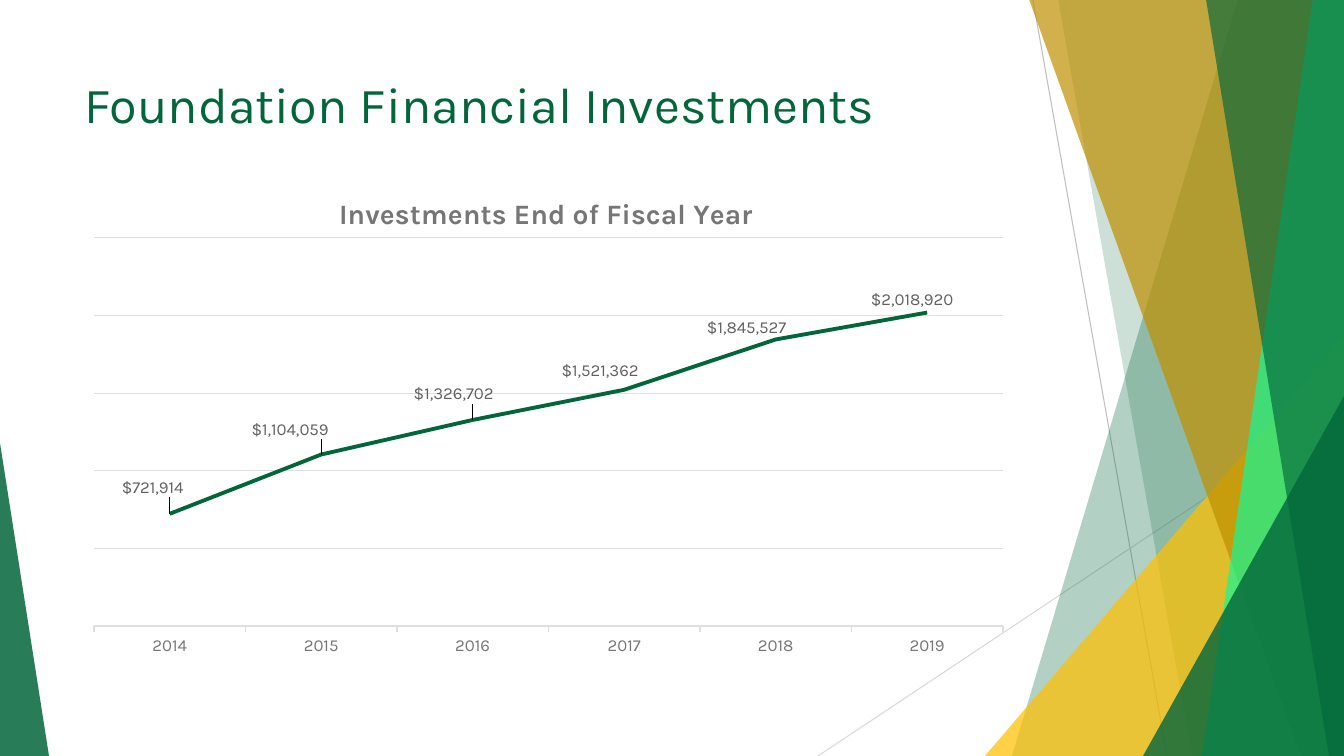
from lxml.etree import SubElement
from pptx import Presentation
from pptx.chart.data import CategoryChartData
from pptx.dml.color import RGBColor
from pptx.enum.chart import XL_CHART_TYPE, XL_LABEL_POSITION as LABEL_AT, XL_TICK_LABEL_POSITION as TICK_AT
from pptx.enum.chart import XL_TICK_MARK as TICK
from pptx.enum.shapes import MSO_CONNECTOR, MSO_SHAPE
from pptx.oxml import parse_xml
from pptx.oxml.ns import nsdecls, qn
from pptx.util import Pt

PX = 914400 / 100.8
WIDTH, HEIGHT = 1344, 756
FONT = "Karla"
DOLLARS = '"$"#,##0'
COLORS = {
    "green": "03663B", "mint": "13F895", "yellow": "FFC000", "gold": "BF9000",
    "line_dark": "BFBFBF", "line_light": "D9D9D9", "grid": "DFDFDF",
    "axis_text": "767676", "label_text": "616161", "chart_text": "2C2C2C",
}


def style_font(font, size, color, bold=False):
    font.name = FONT
    font.size = Pt(size)
    font.bold = bold
    font.color.rgb = RGBColor.from_string(COLORS[color])


def write_text(frame, text, **font_format):
    run = frame.paragraphs[0].add_run()
    run.text = text
    style_font(run.font, **font_format)


prs = Presentation()
prs.slide_width, prs.slide_height = round(WIDTH * PX), round(HEIGHT * PX)
slide = prs.slides.add_slide(prs.slide_layouts[6])
shapes = slide.shapes

# Thin crossing lines
for start, end, color in [
    ((1033, 0), (1167, HEIGHT), "line_dark"),
    ((WIDTH, 406), (818, HEIGHT), "line_light"),
]:
    ray = shapes.add_connector(
        MSO_CONNECTOR.STRAIGHT, *(round(v * PX) for v in start + end))
    ray.line.width = Pt(0.75)
    ray.line.color.rgb = RGBColor.from_string(COLORS[color])
    SubElement(ray._element.spPr, qn("a:effectLst"))

# Overlapping facets, back to front: full-height bands are given by the x of
# their left edge at top and bottom, triangles by their box and apex position
facets = [
    ("band", (1238, 1012), "green", 30),
    ("band", (1058, 1192), "green", 20),
    ("triangle", (985, 336, 359, 420, 1), "yellow", 72),
    ("band", (1029, 1301), "gold", 70),
    ("band", (1313, 1202), "mint", 70),
    ("band", (1206, 1329), "green", 65),
    ("triangle", (1143, 396, 201, 360, 1), "green", 80),
    ("triangle", (0, 443, 49, 313, 0), "green", 85),
]
for kind, geometry, color, opacity in facets:
    if kind == "band":
        top_x, bottom_x = geometry
        outline = shapes.build_freeform(top_x, -1, scale=PX)
        outline.add_line_segments([(WIDTH, -1), (WIDTH, HEIGHT), (bottom_x, HEIGHT)])
        facet = outline.convert_to_shape()
    else:
        *box, apex = geometry
        facet = shapes.add_shape(
            MSO_SHAPE.ISOSCELES_TRIANGLE, *(round(v * PX) for v in box))
        facet.adjustments[0] = apex
    facet.shadow.inherit = False
    facet.line.fill.background()
    facet.fill.solid()
    facet.fill.fore_color.rgb = RGBColor.from_string(COLORS[color])
    fill_color = facet._element.spPr.find(qn("a:solidFill"))[0]
    SubElement(fill_color, qn("a:alpha"), val=str(opacity * 1000))

# Heading
heading = shapes.add_textbox(*(round(v * PX) for v in (75, 68, 948, 145))).text_frame
heading.word_wrap = True
write_text(heading, "Foundation Financial Investments", size=36, color="green")

# Investments by year, with the label's shift from its point in px
investments = [
    ("2014", 721914, (-17, -26)),
    ("2015", 1104059, (-31, -25)),
    ("2016", 1326702, (-19, -26)),
    ("2017", 1521362, (-24, -19)),
    ("2018", 1845527, (-29, -12)),
    ("2019", 2018920, (-15, -13)),
]
chart_left, chart_top, chart_width, chart_height = chart_box = (75, 168, 948, 497)
data = CategoryChartData(number_format=DOLLARS)
data.categories = [year for year, _, _ in investments]
data.add_series("Series 1", [amount for _, amount, _ in investments])
chart = shapes.add_chart(
    XL_CHART_TYPE.LINE, *(round(v * PX) for v in chart_box), data).chart
style_font(chart.font, 10, "chart_text")
chart.has_legend = False
chart.has_title = True
write_text(chart.chart_title.text_frame, "Investments End of Fiscal Year",
           size=20, color="axis_text", bold=True)
chart.chart_title.include_in_layout = False

years = chart.category_axis
years.major_tick_mark = TICK.OUTSIDE
years.tick_label_position = TICK_AT.LOW
years.format.line.width = Pt(1)
years.format.line.color.rgb = RGBColor.from_string(COLORS["grid"])
style_font(years.tick_labels.font, 12, "axis_text")

amounts = chart.value_axis
amounts.visible = False
amounts.minimum_scale, amounts.maximum_scale, amounts.major_unit = 0, 2500000, 500000
amounts.has_major_gridlines = True
amounts.major_gridlines.format.line.width = Pt(0.75)
amounts.major_gridlines.format.line.color.rgb = RGBColor.from_string(COLORS["grid"])

plot = chart.plots[0]
plot.vary_by_categories = False
trend = plot.series[0]
trend.smooth = False
trend.format.line.width = Pt(2.75)
trend.format.line.color.rgb = RGBColor.from_string(COLORS["green"])

labels = trend.data_labels
labels.show_value = True
labels.position = LABEL_AT.CENTER
labels.number_format, labels.number_format_is_linked = DOLLARS, False
style_font(labels.font, 12, "label_text")
for index in range(len(investments)):
    label = trend.points[index].data_label
    label.position = LABEL_AT.CENTER
    style_font(label.font, 12, "label_text")

# Manual layouts: plot area, title and each data label
plot_area = chart._chartSpace.chart.plotArea
for old_layout in plot_area.findall(qn("c:layout")):
    plot_area.remove(old_layout)
title = chart.chart_title._element
for old_layout in title.findall(qn("c:layout")):
    title.remove(old_layout)
placements = [
    (plot_area, 0, {"layoutTarget": "inner", "xMode": "edge", "yMode": "edge"},
     {"x": 94 - chart_left, "y": 238 - chart_top, "w": 909, "h": 388}),
    (title, 1, {"xMode": "edge", "yMode": "edge"},
     {"x": 334 - chart_left, "y": 190 - chart_top}),
]
for label, (_, _, (dx, dy)) in zip(trend._element.findall(".//" + qn("c:dLbl")), investments):
    placements.append((label, 1, {}, {"x": dx, "y": dy}))
for parent, position, modes, lengths in placements:
    layout = parse_xml(f"<c:layout {nsdecls('c')}><c:manualLayout/></c:layout>")
    for tag, mode in modes.items():
        SubElement(layout[0], qn(f"c:{tag}"), val=mode)
    for tag, length in lengths.items():
        whole = chart_width if tag in "xw" else chart_height
        SubElement(layout[0], qn(f"c:{tag}"), val=f"{length / whole:.4f}")
    parent.insert(position, layout)

prs.save("out.pptx")
